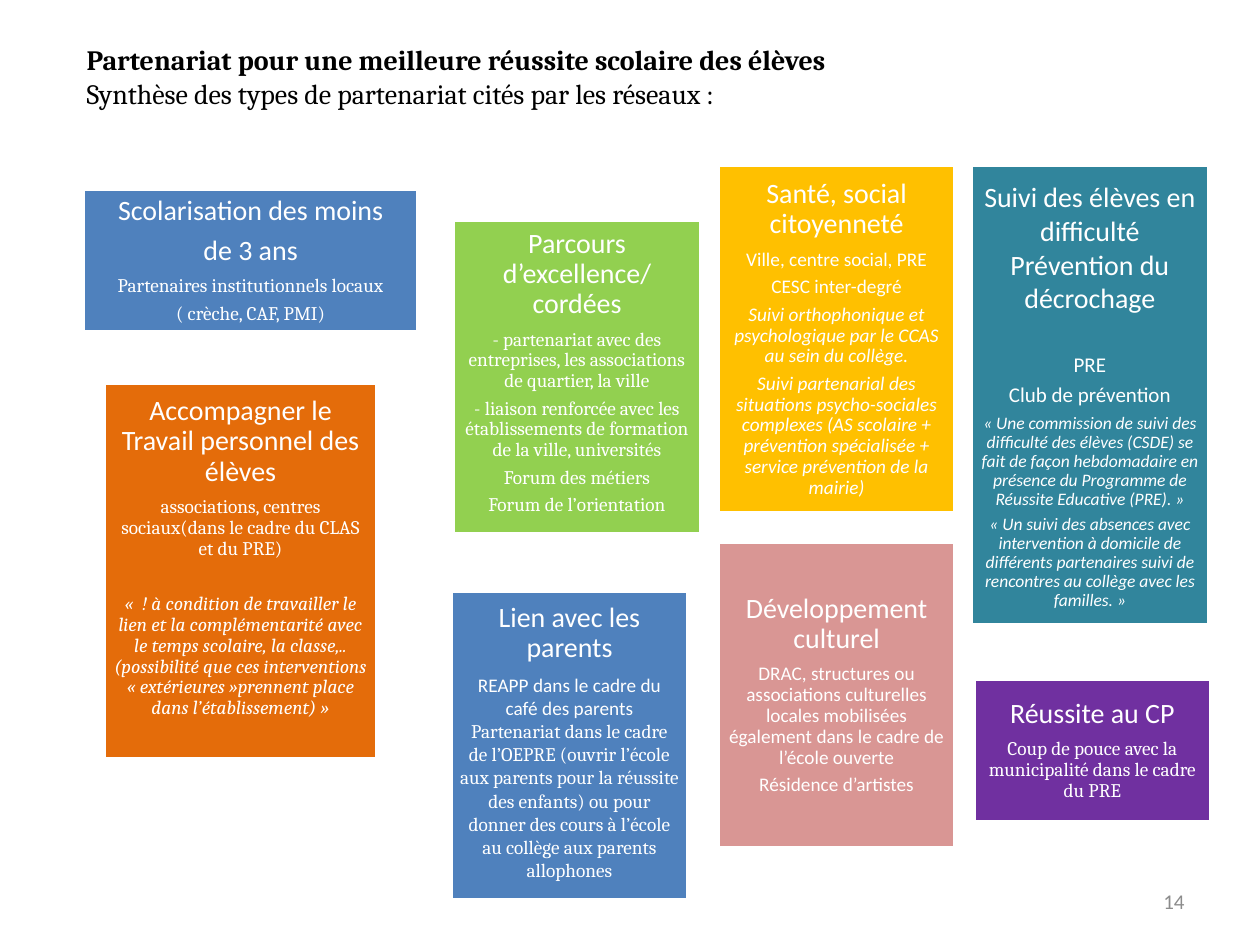
from dataclasses import dataclass

from pptx import Presentation
from pptx.dml.color import RGBColor
from pptx.enum.shapes import MSO_SHAPE
from pptx.enum.text import MSO_ANCHOR, PP_ALIGN
from pptx.util import Inches, Pt

RECTANGLE = MSO_SHAPE.RECTANGLE
MIDDLE = MSO_ANCHOR.MIDDLE
TOP = MSO_ANCHOR.TOP
CENTER = PP_ALIGN.CENTER
LEFT = PP_ALIGN.LEFT
RIGHT = PP_ALIGN.RIGHT


@dataclass(frozen=True)
class Theme:
    sans: str = "Calibri"
    serif: str = "Cambria"
    heading: float = 16
    lead: float = 12
    body: float = 11
    quote: float = 10
    border: float = 2
    inset: float = 0.07
    tight_line: float = 0.9
    space_ratio: float = 0.35
    black: str = "000000"
    white: str = "FFFFFF"
    grey: str = "8C8C8C"
    blue: str = "4F81BD"
    orange: str = "E46C0A"
    yellow: str = "FFC000"
    teal: str = "31859C"
    pink: str = "D99694"
    green: str = "92D050"
    purple: str = "7030A0"


THEME = Theme()


@dataclass(frozen=True)
class Style:
    size: float
    font: str
    color: str = THEME.white
    bold: bool = False
    italic: bool = False
    tight: bool = True
    align: PP_ALIGN = CENTER


HEADING = Style(THEME.heading, THEME.sans)
OPEN_HEADING = Style(THEME.heading, THEME.sans, tight=False)
LEAD = Style(THEME.lead, THEME.sans)
SANS = Style(THEME.body, THEME.sans)
OPEN_SANS = Style(THEME.body, THEME.sans, tight=False)
SANS_ITALIC = Style(THEME.body, THEME.sans, italic=True)
SERIF = Style(THEME.body, THEME.serif)
OPEN_SERIF = Style(THEME.body, THEME.serif, tight=False)
SERIF_ITALIC = Style(THEME.body, THEME.serif, italic=True)
QUOTE = Style(THEME.quote, THEME.sans, italic=True)
TITLE = Style(THEME.heading, THEME.serif, THEME.black, bold=True, tight=False, align=LEFT)
SUBTITLE = Style(THEME.heading, THEME.serif, THEME.black, tight=False, align=LEFT)
PAGE_NUMBER = Style(THEME.lead, THEME.sans, THEME.grey, tight=False, align=RIGHT)


@dataclass(frozen=True)
class Line:
    text: str
    style: Style
    gap_before: float = 0


@dataclass(frozen=True)
class Card:
    """A partnership type; lift is extra bottom inset that raises its text."""
    left: float
    top: float
    width: float
    height: float
    fill: str
    lines: tuple[Line, ...]
    lift: float = 0


CARDS = (
    Card(0.83, 3.04, 2.16, 2.98, THEME.orange, (
        Line("Accompagner le Travail personnel des élèves", HEADING),
        Line("associations, centres sociaux(dans le cadre du CLAS et du PRE)", SERIF),
        Line("«  ! à condition de travailler le lien et la complémentarité avec le temps "
             "scolaire, la classe,..(possibilité que ces interventions « extérieures »"
             "prennent place dans l’établissement) »", SERIF_ITALIC, gap_before=16),
    ), lift=0.21),
    Card(3.58, 4.69, 1.88, 2.45, THEME.blue, (
        Line("Lien avec les parents", HEADING),
        Line("REAPP dans le cadre du café des parents", OPEN_SANS),
        Line("Partenariat dans le cadre de l’OEPRE (ouvrir l’école aux parents pour la "
             "réussite des enfants) ou pour donner des cours à l’école au collège aux "
             "parents allophones", OPEN_SERIF),
    ), lift=0.05),
    Card(5.7, 1.31, 1.88, 2.76, THEME.yellow, (
        Line("Santé, social citoyenneté", HEADING),
        Line("Ville, centre social, PRE", SANS),
        Line("CESC inter-degré", SANS),
        Line("Suivi orthophonique et psychologique par le CCAS au sein du collège.",
             SANS_ITALIC),
        Line("Suivi partenarial des situations psycho-sociales complexes (AS scolaire + "
             "prévention spécialisée + service prévention de la mairie)", SANS_ITALIC),
    )),
    Card(7.71, 1.31, 1.88, 3.65, THEME.teal, (
        Line("Suivi des élèves en difficulté", OPEN_HEADING),
        Line("Prévention du décrochage", OPEN_HEADING),
        Line("PRE", LEAD, gap_before=23),
        Line("Club de prévention", LEAD),
        Line("« Une commission de suivi des difficulté des élèves (CSDE) se fait de façon "
             "hebdomadaire en présence du Programme de Réussite Educative (PRE). »", QUOTE),
        Line("« Un suivi des absences avec intervention à domicile de différents "
             "partenaires suivi de rencontres au collège avec les familles. »", QUOTE),
    )),
    Card(5.7, 4.3, 1.88, 2.43, THEME.pink, (
        Line("Développement culturel", HEADING),
        Line("DRAC, structures ou associations culturelles locales mobilisées également "
             "dans le cadre de l’école ouverte", SANS),
        Line("Résidence d’artistes", SANS),
    )),
    Card(0.66, 1.5, 2.66, 1.13, THEME.blue, (
        Line("Scolarisation des moins", HEADING),
        Line("de 3 ans", HEADING),
        Line("Partenaires institutionnels locaux", SERIF),
        Line("( crèche, CAF, PMI)", SERIF),
    )),
    Card(3.6, 1.75, 1.96, 2.49, THEME.green, (
        Line("Parcours d’excellence/ cordées", HEADING),
        Line("- partenariat avec des entreprises, les associations de quartier, la ville",
             SERIF),
        Line("- liaison renforcée avec les établissements de formation de la ville, "
             "universités", SERIF),
        Line("Forum des métiers", SERIF),
        Line("Forum de l’orientation", SERIF),
    ), lift=0.08),
    Card(7.73, 5.39, 1.88, 1.13, THEME.purple, (
        Line("Réussite au CP", HEADING),
        Line("Coup de pouce avec la municipalité dans le cadre du PRE", SERIF),
    )),
)


def write_lines(frame, lines: tuple[Line, ...], anchor: MSO_ANCHOR) -> None:
    frame.word_wrap = True
    frame.vertical_anchor = anchor
    for index, line in enumerate(lines):
        paragraph = frame.add_paragraph() if index else frame.paragraphs[0]
        style = line.style
        paragraph.text = line.text
        paragraph.alignment = style.align
        paragraph.space_before = Pt(line.gap_before)
        paragraph.space_after = Pt(style.size * THEME.space_ratio if style.tight else 0)
        paragraph.line_spacing = THEME.tight_line if style.tight else 1.0
        font = paragraph.runs[0].font
        font.size = Pt(style.size)
        font.name = style.font
        font.bold = style.bold
        font.italic = style.italic
        font.color.rgb = RGBColor.from_string(style.color)


def add_text(slide, left: float, top: float, width: float, height: float,
             lines: tuple[Line, ...], anchor: MSO_ANCHOR) -> None:
    box = slide.shapes.add_textbox(Inches(left), Inches(top), Inches(width), Inches(height))
    write_lines(box.text_frame, lines, anchor)


def add_card(slide, card: Card) -> None:
    shape = slide.shapes.add_shape(RECTANGLE, Inches(card.left), Inches(card.top),
                                   Inches(card.width), Inches(card.height))
    shape.shadow.inherit = False
    shape.fill.solid()
    shape.fill.fore_color.rgb = RGBColor.from_string(card.fill)
    shape.line.color.rgb = RGBColor.from_string(THEME.white)
    shape.line.width = Pt(THEME.border)
    frame = shape.text_frame
    frame.margin_left = frame.margin_right = frame.margin_top = Inches(THEME.inset)
    frame.margin_bottom = Inches(THEME.inset + card.lift)
    write_lines(frame, card.lines, MIDDLE)


def main() -> None:
    presentation = Presentation()
    presentation.slide_width = Inches(10)
    presentation.slide_height = Inches(7.5)
    slide = presentation.slides.add_slide(presentation.slide_layouts[6])
    add_text(slide, 0.59, 0.29, 8.66, 0.64, (
        Line("Partenariat pour une meilleure réussite scolaire des élèves", TITLE),
        Line("Synthèse des types de partenariat cités par les réseaux :", SUBTITLE),
    ), TOP)
    for card in CARDS:
        add_card(slide, card)
    add_text(slide, 7.17, 6.95, 2.33, 0.4, (Line("14", PAGE_NUMBER),), MIDDLE)
    presentation.save("out.pptx")


if __name__ == "__main__":
    main()
